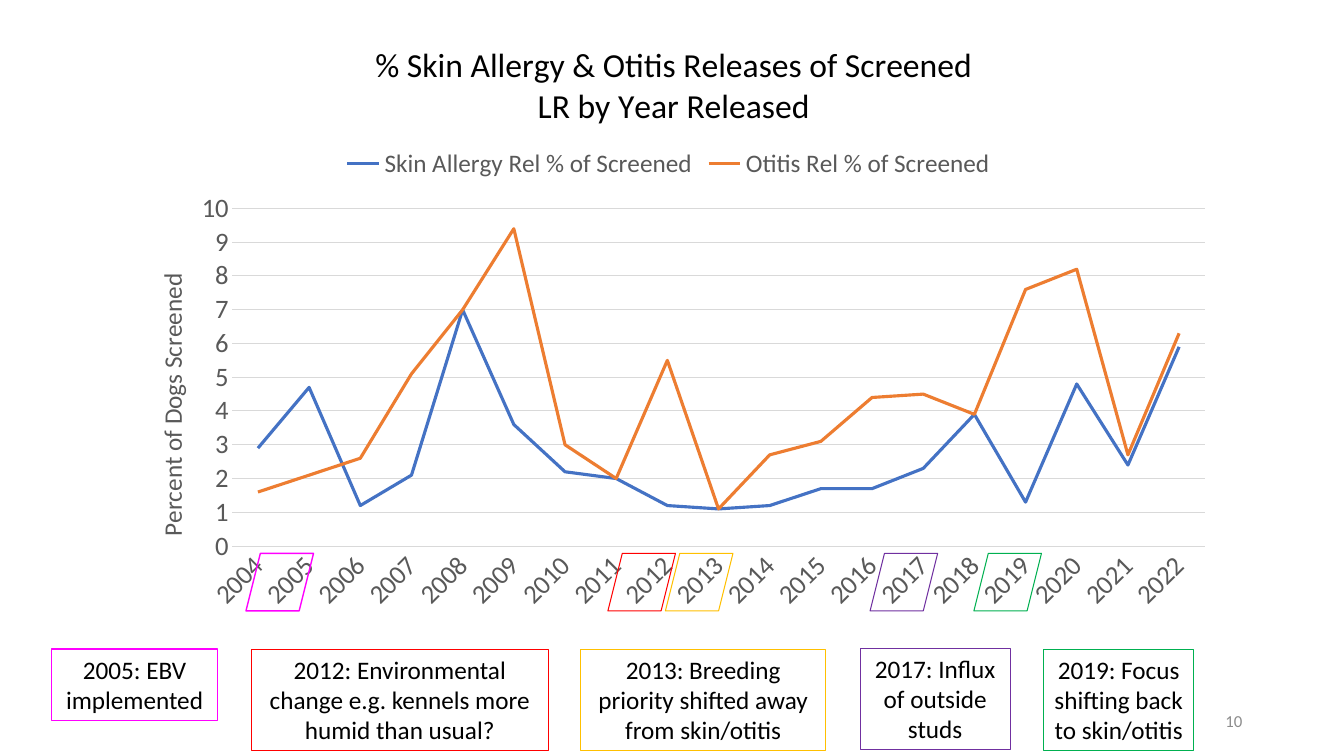
"""Build the slide on skin allergy and otitis releases by year."""
from lxml import etree
from pptx import Presentation
from pptx.chart.data import CategoryChartData
from pptx.dml.color import RGBColor
from pptx.enum.chart import XL_CHART_TYPE, XL_LEGEND_POSITION, XL_TICK_MARK
from pptx.enum.shapes import MSO_SHAPE
from pptx.enum.text import MSO_ANCHOR, MSO_AUTO_SIZE, PP_ALIGN
from pptx.oxml.ns import qn
from pptx.util import Inches, Pt

LINE_CHART = XL_CHART_TYPE.LINE
LEGEND_TOP = XL_LEGEND_POSITION.TOP
NO_TICK = XL_TICK_MARK.NONE
PARALLELOGRAM = MSO_SHAPE.PARALLELOGRAM
MIDDLE = MSO_ANCHOR.MIDDLE
GROW = MSO_AUTO_SIZE.SHAPE_TO_FIT_TEXT
CENTER, RIGHT = PP_ALIGN.CENTER, PP_ALIGN.RIGHT

BLACK = RGBColor(0x00, 0x00, 0x00)
DARK_GRAY = RGBColor(0x59, 0x59, 0x59)
MID_GRAY = RGBColor(0x8C, 0x8C, 0x8C)
LIGHT_GRAY = RGBColor(0xD9, 0xD9, 0xD9)
BLUE = RGBColor(0x44, 0x72, 0xC4)
ORANGE = RGBColor(0xED, 0x7D, 0x31)
MAGENTA = RGBColor(0xFF, 0x00, 0xFF)
RED = RGBColor(0xFF, 0x00, 0x00)
GOLD = RGBColor(0xFF, 0xC0, 0x00)
PURPLE = RGBColor(0x70, 0x30, 0xA0)
GREEN = RGBColor(0x00, 0xB0, 0x50)
FONT = "Calibri"


def style(font, size, color):
    font.name, font.size, font.bold = FONT, Pt(size), False
    font.color.rgb = color


def place(element, index, **shares):
    for old in element.findall(qn("c:layout")):
        element.remove(old)
    layout = etree.Element(qn("c:layout"))
    manual = etree.SubElement(layout, qn("c:manualLayout"))
    if "w" in shares:
        etree.SubElement(manual, qn("c:layoutTarget")).set("val", "inner")
    for mode in ("xMode", "yMode"):
        etree.SubElement(manual, qn("c:" + mode)).set("val", "edge")
    for name, share in shares.items():
        etree.SubElement(manual, qn("c:" + name)).set("val", str(share))
    element.insert(index, layout)


deck = Presentation()
deck.slide_width, deck.slide_height = Inches(13.33), Inches(7.5)
page = deck.slides.add_slide(deck.slide_layouts[6])

number_box = page.shapes.add_textbox(Inches(9.42), Inches(6.95), Inches(3), Inches(0.4))
number_box.text_frame.text = "10"
number_box.text_frame.vertical_anchor = MIDDLE
number_para = number_box.text_frame.paragraphs[0]
number_para.alignment = RIGHT
style(number_para.runs[0].font, 12, MID_GRAY)

data = CategoryChartData()
data.categories = [str(year) for year in range(2004, 2023)]
data.add_series("Skin Allergy Rel % of Screened", [
    2.9, 4.7, 1.2, 2.1, 7, 3.6, 2.2, 2, 1.2, 1.1,
    1.2, 1.7, 1.7, 2.3, 3.9, 1.3, 4.8, 2.4, 5.9])
data.add_series("Otitis Rel % of Screened", [
    1.6, 2.1, 2.6, 5.1, 7, 9.4, 3, 2, 5.5, 1.1,
    2.7, 3.1, 4.4, 4.5, 3.9, 7.6, 8.2, 2.7, 6.3])
chart = page.shapes.add_chart(
    LINE_CHART, Inches(1.16), Inches(0.23), Inches(11.01), Inches(5.95), data).chart
style(chart.font, 10, BLACK)
chart.plots[0].vary_by_categories = False
for series, color in zip(chart.plots[0].series, (BLUE, ORANGE)):
    series.smooth = False
    series.format.line.color.rgb = color
    series.format.line.width = Pt(2.25)

chart.has_legend = True
chart.legend.position = LEGEND_TOP
chart.legend.include_in_layout = False
style(chart.legend.font, 18, DARK_GRAY)

years, percents = chart.category_axis, chart.value_axis
for axis in (years, percents):
    axis.major_tick_mark = axis.minor_tick_mark = NO_TICK
    style(axis.tick_labels.font, 19, DARK_GRAY)
years.format.line.color.rgb = LIGHT_GRAY
years.format.line.width = Pt(0.75)
years_text = years.tick_labels.font._element.getparent().getparent().getparent()
years_text.find(qn("a:bodyPr")).set("rot", "-2700000")
percents.minimum_scale, percents.maximum_scale, percents.major_unit = 0, 10, 1
percents.format.line.fill.background()
percents.major_gridlines.format.line.color.rgb = LIGHT_GRAY
percents.major_gridlines.format.line.width = Pt(0.75)

for title, text, size, color in (
        (chart.chart_title, "% Skin Allergy & Otitis Releases of Screened\nLR by Year Released", 24, BLACK),
        (percents.axis_title, "Percent of Dogs Screened", 18, DARK_GRAY)):
    title.text_frame.text = text
    for para in title.text_frame.paragraphs:
        para.alignment = CENTER
        style(para.runs[0].font, size, color)

place(chart.chart_title._element, 1, x=0.23, y=0.03)
place(percents.axis_title._element, 1, x=0.03, y=0.41)
place(chart.legend._element, 1, x=0.2, y=0.2)
place(chart.plots[0]._element.getparent(), 0, x=0.104, y=0.309, w=0.876, h=0.563)

events = [
    ("2005: EBV implemented", MAGENTA, 1, 2.44, 0.51, 6.44, 1.65, 0.71),
    ("2012: Environmental change e.g. kennels more humid than usual?", RED, 0.75, 6.03, 2.49, 6.44, 2.95, 1.01),
    ("2013: Breeding priority shifted away from skin/otitis", GOLD, 0.75, 6.6, 5.76, 6.44, 2.43, 1.01),
    ("2017: Influx of outside studs", PURPLE, 0.75, 8.63, 8.53, 6.43, 1.49, 1.01),
    ("2019: Focus shifting back to skin/otitis", GREEN, 0.75, 9.66, 10.35, 6.44, 1.49, 1.01),
]
for text, color, weight, marker_left, left, top, width, height in events:
    marker = page.shapes.add_shape(
        PARALLELOGRAM, Inches(marker_left), Inches(5.49), Inches(0.67), Inches(0.57))
    marker.shadow.inherit = False
    marker.fill.background()
    note = page.shapes.add_textbox(Inches(left), Inches(top), Inches(width), Inches(height))
    for outlined in (marker, note):
        outlined.line.color.rgb = color
        outlined.line.width = Pt(weight)
    frame = note.text_frame
    frame.word_wrap, frame.auto_size = True, GROW
    frame.text = text
    frame.paragraphs[0].alignment = CENTER
    style(frame.paragraphs[0].runs[0].font, 18, BLACK)

deck.save("out.pptx")
